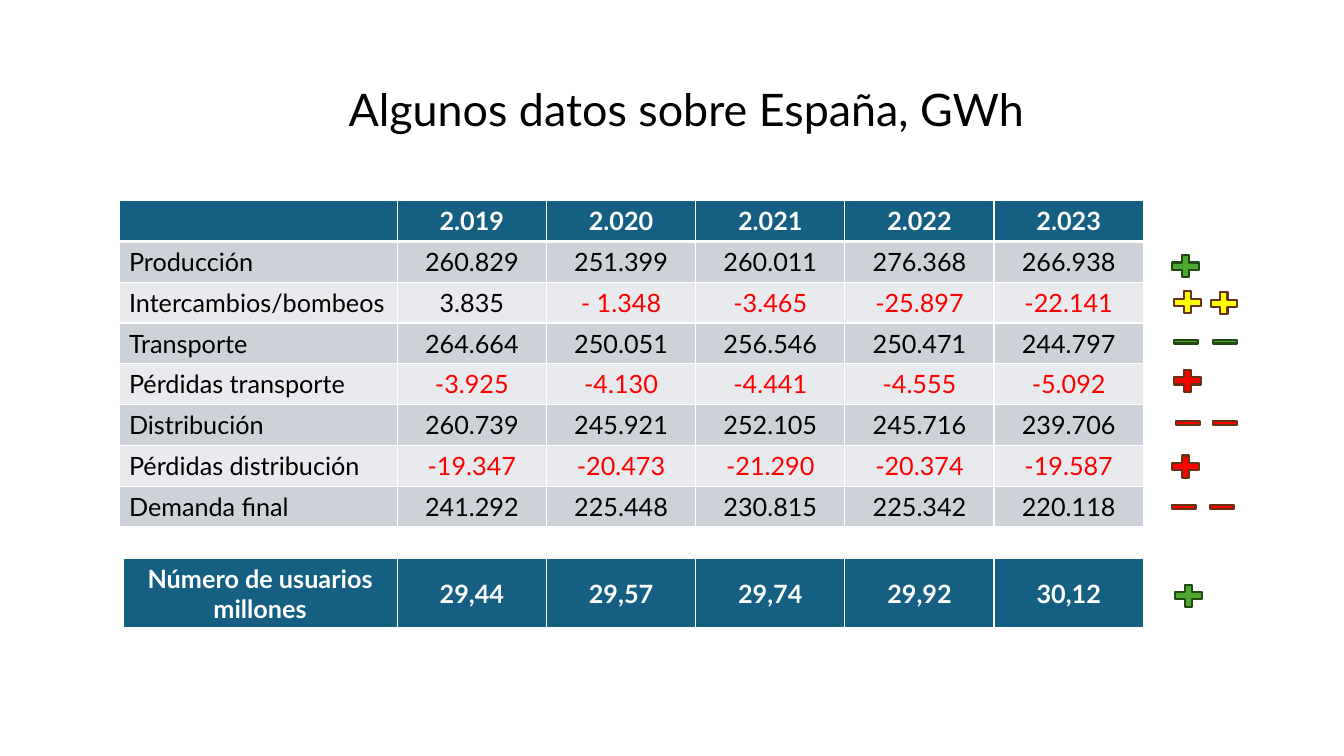
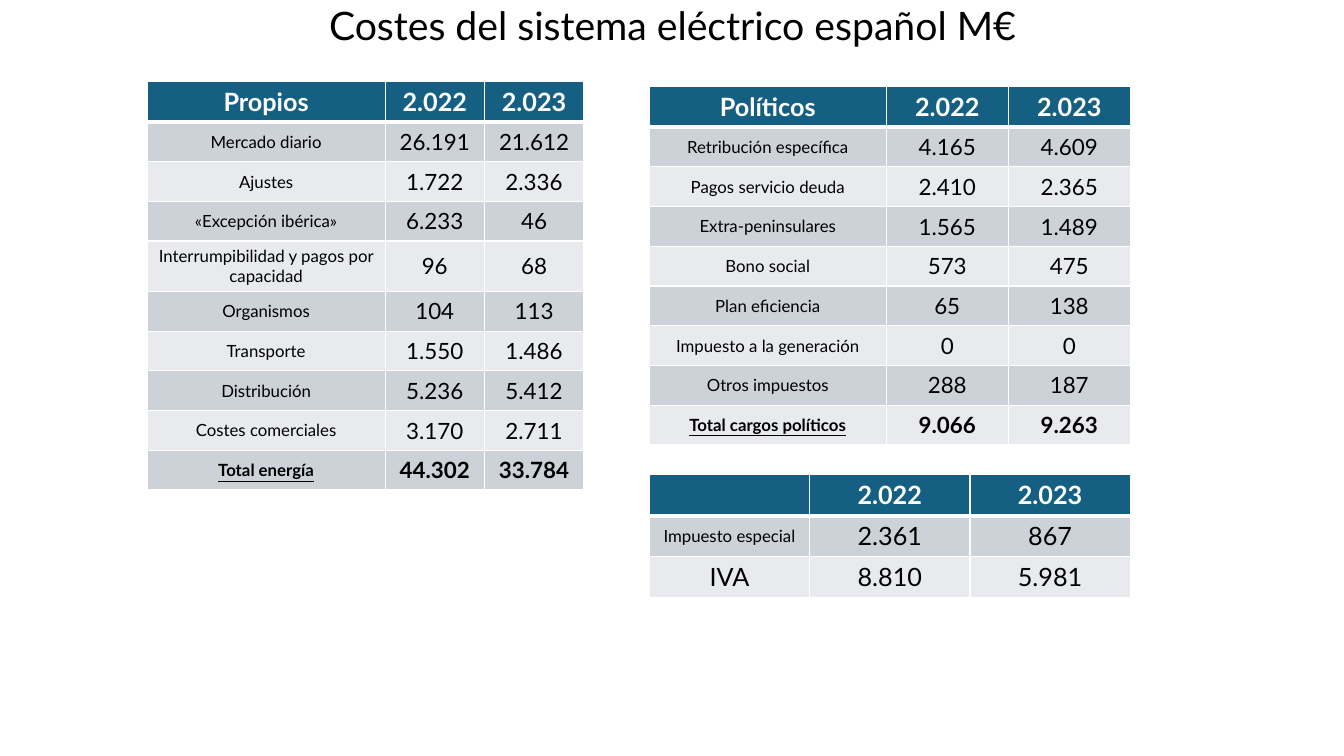
from dataclasses import dataclass

from lxml.etree import SubElement
from pptx import Presentation
from pptx.dml.color import RGBColor
from pptx.enum.shapes import MSO_SHAPE as SHAPE
from pptx.enum.text import MSO_ANCHOR as ANCHOR, PP_ALIGN as ALIGN
from pptx.oxml.ns import qn
from pptx.util import Inches, Pt


@dataclass(frozen=True)
class Theme:
    font: str = "Lato"
    text: str = "000000"
    white: str = "FFFFFF"
    header: str = "156082"
    bands: tuple = ("CCD2D8", "E8EAED")
    green: str = "4EA72E"
    dark_green: str = "224914"
    yellow: str = "FFFF00"
    red: str = "FF0000"
    brown: str = "663216"
    table_pt: int = 18
    value_pt: int = 16
    label_pt: int = 12
    border_pt: int = 1
    header_border_pt: int = 3
    sign_line_pt: float = 1.5


T = Theme()
SIGNS = {"+": (SHAPE.MATH_PLUS, 0.36, 0.30), "-": (SHAPE.MATH_MINUS, 0.32, 0.16)}

BALANCE = [
    ("", "2.019", "2.020", "2.021", "2.022", "2.023"),
    ("Producción", "260.829", "251.399", "260.011", "276.368", "266.938"),
    ("Intercambios/bombeos", "3.835", "- 1.348", "-3.465", "-25.897", "-22.141"),
    ("Transporte", "264.664", "250.051", "256.546", "250.471", "244.797"),
    ("Pérdidas transporte", "-3.925", "-4.130", "-4.441", "-4.555", "-5.092"),
    ("Distribución", "260.739", "245.921", "252.105", "245.716", "239.706"),
    ("Pérdidas distribución", "-19.347", "-20.473", "-21.290", "-20.374", "-19.587"),
    ("Demanda final", "241.292", "225.448", "230.815", "225.342", "220.118"),
]
USERS = [("Número de usuarios\nmillones", "29,44", "29,57", "29,74", "29,92", "30,12")]
OWN_COSTS = [
    ("Propios", "2.022", "2.023"),
    ("Mercado diario", "26.191", "21.612"),
    ("Ajustes", "1.722", "2.336"),
    ("«Excepción ibérica»", "6.233", "46"),
    ("Interrumpibilidad y pagos por capacidad", "96", "68"),
    ("Organismos", "104", "113"),
    ("Transporte", "1.550", "1.486"),
    ("Distribución", "5.236", "5.412"),
    ("Costes comerciales", "3.170", "2.711"),
    ("Total energía", "44.302", "33.784"),
]
POLITICAL_COSTS = [
    ("Políticos", "2.022", "2.023"),
    ("Retribución específica", "4.165", "4.609"),
    ("Pagos servicio deuda", "2.410", "2.365"),
    ("Extra-peninsulares", "1.565", "1.489"),
    ("Bono social", "573", "475"),
    ("Plan eficiencia", "65", "138"),
    ("Impuesto a la generación", "0", "0"),
    ("Otros impuestos", "288", "187"),
    ("Total cargos políticos", "9.066", "9.263"),
]
TAXES = [
    ("", "2.022", "2.023"),
    ("Impuesto especial", "2.361", "867"),
    ("IVA", "8.810", "5.981"),
]


def rgb(color):
    return RGBColor.from_string(color)


def write(tf, text, size, color=T.text, bold=False, underline=False, align=ALIGN.CENTER):
    """Fill a text frame, one paragraph for each line of text."""
    for i, line in enumerate(text.split("\n")):
        p = tf.paragraphs[0] if i == 0 else tf.add_paragraph()
        p.alignment = align
        if not line:
            continue
        r = p.add_run()
        r.text = line
        r.font.name = T.font
        r.font.size = Pt(size)
        r.font.bold = bold
        r.font.underline = underline
        r.font.color.rgb = rgb(color)


def add_title(slide, text, size, left, top, width, height):
    box = slide.shapes.add_textbox(Inches(left), Inches(top), Inches(width), Inches(height))
    tf = box.text_frame
    tf.word_wrap = True
    tf.vertical_anchor = ANCHOR.MIDDLE
    write(tf, text, size)
    tf.paragraphs[0].line_spacing = 0.9


def set_borders(cell, top, bottom):
    """Draw white borders; top and bottom are widths in points."""
    tc_pr = cell._tc.get_or_add_tcPr()
    widths = {"L": T.border_pt, "R": T.border_pt, "T": top, "B": bottom}
    for side, width in widths.items():
        ln = SubElement(tc_pr, qn(f"a:ln{side}"), w=str(Pt(width)))
        SubElement(SubElement(ln, qn("a:solidFill")), qn("a:srgbClr"), val=T.white)


def style_cell(cell, row):
    set_borders(
        cell,
        top=T.header_border_pt if row == 1 else T.border_pt,
        bottom=T.header_border_pt if row == 0 else T.border_pt,
    )
    cell.fill.solid()
    cell.fill.fore_color.rgb = rgb(T.header if row == 0 else T.bands[(row - 1) % 2])
    cell.vertical_anchor = ANCHOR.MIDDLE


def add_data_table(slide, rows, left, top, width, height, label_width,
                   label_pt=T.label_pt, value_pt=T.value_pt,
                   label_align=ALIGN.CENTER, large_labels=()):
    """Add a table with a header row, a label column and equal value columns."""
    n_cols = len(rows[0])
    table = slide.shapes.add_table(
        len(rows), n_cols, Inches(left), Inches(top), Inches(width), Inches(height)
    ).table
    table.first_row = table.horz_banding = False
    for c, column in enumerate(table.columns):
        column.width = Inches(label_width if c == 0 else (width - label_width) / (n_cols - 1))
    for r, values in enumerate(rows):
        table.rows[r].height = Inches(height / len(rows))
        total = values[0].startswith("Total")
        for c, text in enumerate(values):
            cell = table.cell(r, c)
            style_cell(cell, r)
            if r == 0:
                write(cell.text_frame, text, T.table_pt, T.white, bold=True)
            elif c == 0:
                size = T.table_pt if text in large_labels else label_pt
                write(cell.text_frame, text, size, bold=total, underline=total,
                      align=label_align)
            else:
                color = T.red if text.startswith("-") else T.text
                write(cell.text_frame, text, value_pt, color, bold=total)


def add_sign(slide, sign, left, top, fill, line=T.brown):
    kind, width, height = SIGNS[sign]
    sp = slide.shapes.add_shape(kind, Inches(left), Inches(top), Inches(width), Inches(height))
    sp.shadow.inherit = False
    sp.fill.solid()
    sp.fill.fore_color.rgb = rgb(fill)
    sp.line.color.rgb = rgb(line)
    sp.line.width = Pt(T.sign_line_pt)


def build_energy_slide(slide):
    add_title(slide, "Algunos datos sobre España, GWh", 32, 1.06, 0.39, 11.5, 1.45)
    add_data_table(slide, BALANCE, 1.18, 1.99, 10.16, 3.24, 2.76,
                   T.table_pt, T.table_pt, ALIGN.LEFT)
    add_data_table(slide, USERS, 1.22, 5.54, 10.12, 0.7, 2.72)
    green = (T.green, T.dark_green)
    for sign, left, top, *colors in (
        ("+", 11.58, 2.49, *green),
        ("+", 11.60, 2.85, T.yellow),
        ("+", 11.96, 2.86, T.yellow),
        ("-", 11.60, 3.31, *green),
        ("-", 11.99, 3.31, *green),
        ("+", 11.60, 3.63, T.red),
        ("-", 11.62, 4.12, T.red),
        ("-", 11.99, 4.12, T.red),
        ("+", 11.58, 4.48, T.red),
        ("-", 11.58, 4.95, T.red),
        ("-", 11.96, 4.95, T.red),
        ("+", 11.61, 5.76, *green),
    ):
        add_sign(slide, sign, left, top, *colors)


def build_cost_slide(slide):
    add_title(slide, "Costes del sistema eléctrico español M€", 28, 0.92, 0, 11.5, 0.55)
    add_data_table(slide, OWN_COSTS, 1.46, 0.81, 4.33, 3.94, 2.36)
    add_data_table(slide, POLITICAL_COSTS, 6.44, 0.86, 4.77, 3.55, 2.35)
    add_data_table(slide, TAXES, 6.44, 4.71, 4.77, 1.22, 1.59,
                   value_pt=T.table_pt, large_labels=("IVA",))


def main():
    prs = Presentation()
    prs.slide_width, prs.slide_height = Inches(13.33), Inches(7.5)
    blank = prs.slide_layouts[6]
    for build in (build_energy_slide, build_cost_slide):
        build(prs.slides.add_slide(blank))
    prs.save("out.pptx")


if __name__ == "__main__":
    main()
